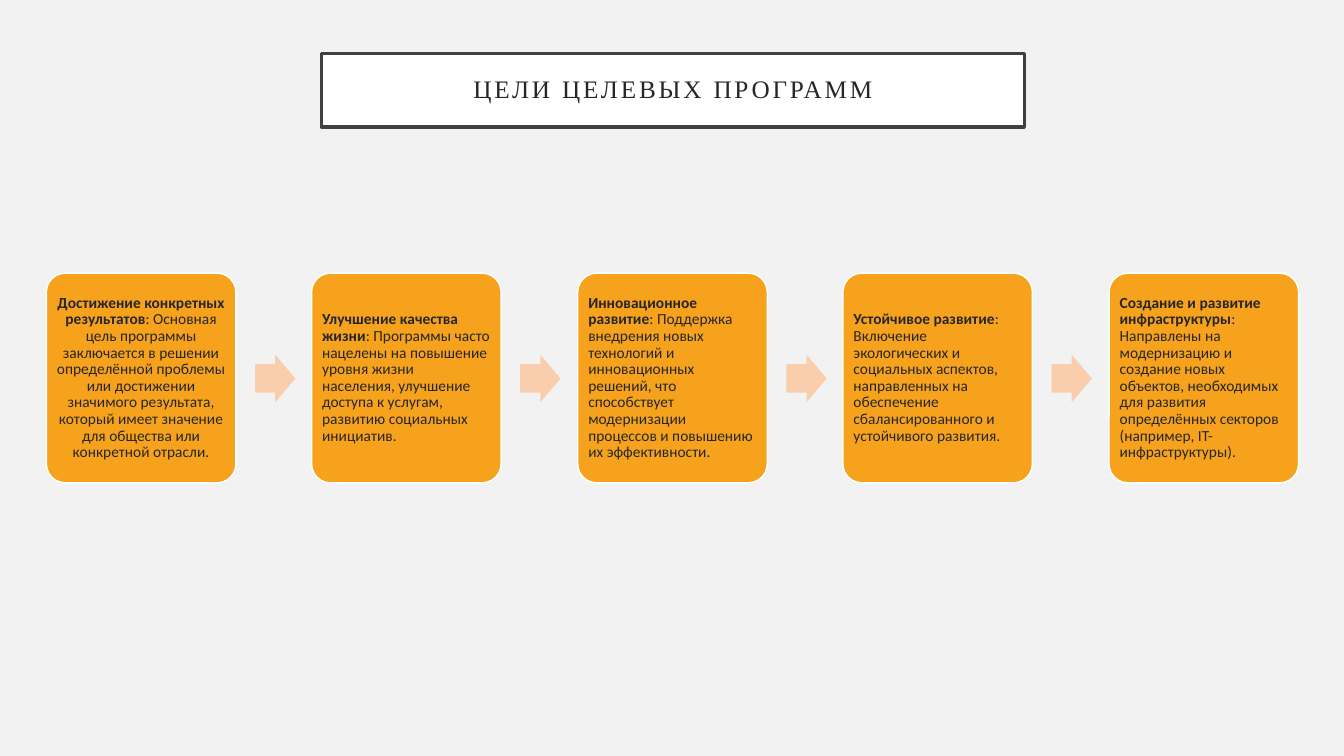
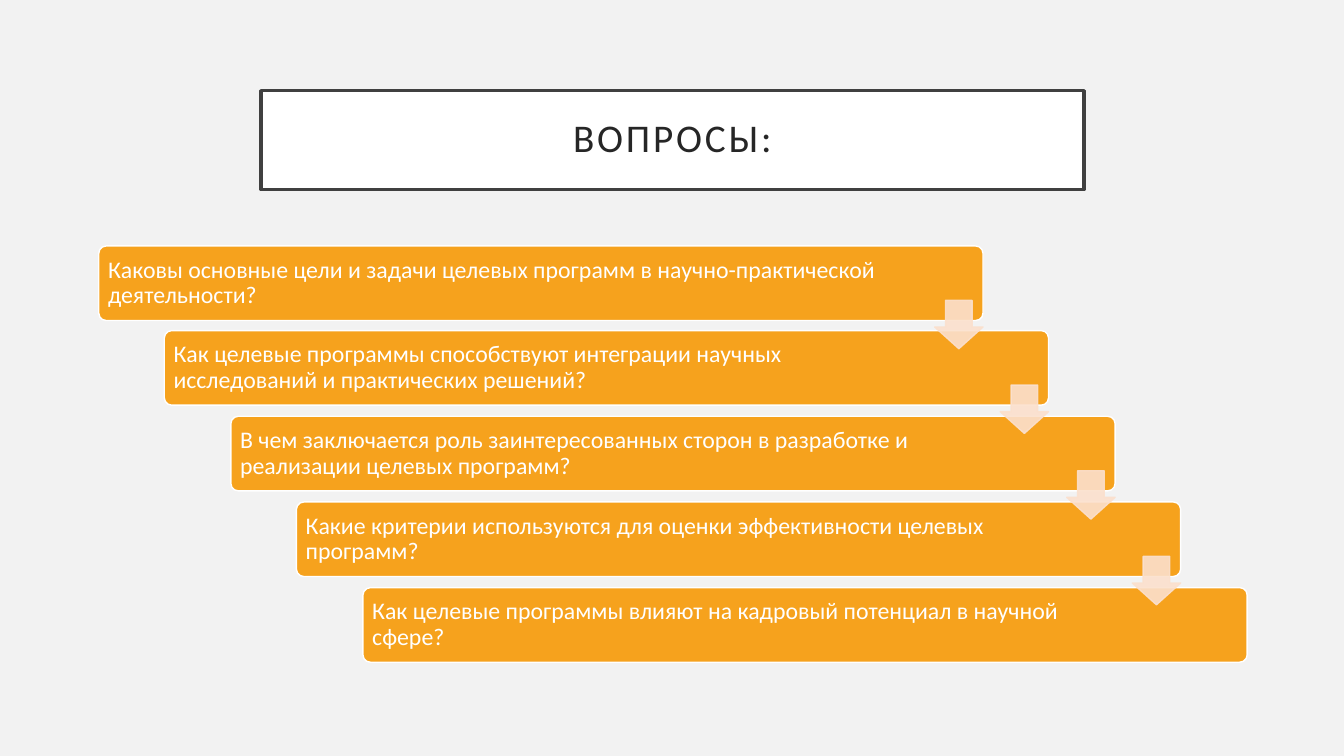
"""Build two slides on the goals of target programmes and the questions about them."""
from dataclasses import dataclass

from lxml import etree
from pptx import Presentation
from pptx import util as u
from pptx.dml.color import RGBColor
from pptx.enum import shapes, text
from pptx.oxml import ns

PX = 9144
PAPER = RGBColor(0xF2, 0xF2, 0xF2)
WHITE = RGBColor(0xFF, 0xFF, 0xFF)
FRAME = RGBColor(0x40, 0x40, 0x40)
INK = RGBColor(0x26, 0x26, 0x26)
ORANGE = RGBColor(0xF6, 0xA2, 0x1D)
PEACH = RGBColor(0xFA, 0xCE, 0xAC)
PALE = RGBColor(0xFB, 0xE0, 0xCD)
KIND = shapes.MSO_SHAPE
LEFT, CENTER = text.PP_ALIGN.LEFT, text.PP_ALIGN.CENTER


@dataclass(frozen=True)
class Box:
    x: int
    y: int
    w: int
    h: int


@dataclass(frozen=True)
class Type:
    font: str
    size: int
    color: RGBColor
    align: text.PP_ALIGN = LEFT


@dataclass(frozen=True)
class Goal:
    head: str
    body: str
    align: text.PP_ALIGN = LEFT


@dataclass(frozen=True)
class Query:
    body: str
    right: int = 121


GOALS = [
    Goal("Достижение конкретных результатов",
         ": Основная цель программы заключается в решении определённой проблемы или достижении "
         "значимого результата, который имеет значение для общества или конкретной отрасли.", CENTER),
    Goal("Улучшение качества жизни",
         ": Программы часто нацелены на повышение уровня жизни населения, улучшение доступа "
         "к услугам, развитию социальных инициатив."),
    Goal("Инновационное развитие",
         ": Поддержка внедрения новых технологий и инновационных решений, что способствует "
         "модернизации процессов и повышению их эффективности."),
    Goal("Устойчивое развитие",
         ": Включение экологических и социальных аспектов, направленных на обеспечение "
         "сбалансированного и устойчивого развития."),
    Goal("Создание и развитие инфраструктуры",
         ": Направлены на модернизацию и создание новых объектов, необходимых для развития "
         "определённых секторов (например, IT-инфраструктуры)."),
]
QUERIES = [
    Query("Каковы основные цели и задачи целевых программ в научно-практической деятельности?", 91),
    Query("Как целевые программы способствуют интеграции научных исследований и практических решений?"),
    Query("В чем заключается роль заинтересованных сторон в разработке и реализации целевых программ?"),
    Query("Какие критерии используются для оценки эффективности целевых программ?"),
    Query("Как целевые программы влияют на кадровый потенциал в научной сфере?"),
]


def draw(slide, kind, box: Box, fill: RGBColor, line: RGBColor | None = None,
         width: float = 1, adj: tuple[float, ...] = ()):
    shape = slide.shapes.add_shape(kind, *(v * PX for v in (box.x, box.y, box.w, box.h)))
    shape.shadow.inherit = False
    shape.fill.solid()
    shape.fill.fore_color.rgb = fill
    if line is None:
        shape.line.fill.background()
    else:
        shape.line.color.rgb = line
        shape.line.width = u.Pt(width)
    for i, v in enumerate(adj):
        shape.adjustments[i] = v
    return shape


def write(shape, runs: list[tuple[str, bool]], style: Type, pad: int, right: int | None = None):
    frame = shape.text_frame
    frame.word_wrap = True
    frame.vertical_anchor = text.MSO_ANCHOR.MIDDLE
    frame.margin_left = frame.margin_top = frame.margin_bottom = pad * PX
    frame.margin_right = (pad if right is None else right) * PX
    para = frame.paragraphs[0]
    para.alignment = style.align
    para.line_spacing = 0.9
    para.font.name = style.font
    para.font.size = u.Pt(style.size)
    para.font.color.rgb = style.color
    for words, bold in runs:
        run = para.add_run()
        run.text = words
        if bold:
            run.font.bold = True
    return para


def fade(shape, share: int) -> None:
    for color in shape._element.spPr.iter(ns.qn("a:srgbClr")):
        etree.SubElement(color, ns.qn("a:alpha")).set("val", str(share * 1000))


def start(deck, title: str, box: Box, font: str, size: int):
    slide = deck.slides.add_slide(deck.slide_layouts[6])
    slide.background.fill.solid()
    slide.background.fill.fore_color.rgb = PAPER
    frame = draw(slide, KIND.RECTANGLE, box, WHITE, FRAME, 2.5)
    para = write(frame, [(title, False)], Type(font, size, INK, CENTER), 20)
    para.runs[0].font._element.set("spc", "200")
    return slide


def panel(slide, box: Box):
    return draw(slide, KIND.ROUNDED_RECTANGLE, box, ORANGE, WHITE, adj=(0.1,))


def goals(deck) -> None:
    slide = start(deck, "ЦЕЛИ ЦЕЛЕВЫХ ПРОГРАММ", Box(319, 53, 697, 73), "Times New Roman", 18)
    for i, goal in enumerate(GOALS):
        card = Box(46 + i * 527 // 2, 271, 188, 208)
        write(panel(slide, card), [(goal.head, True), (goal.body, False)],
              Type("Calibri", 11, INK, goal.align), 5)
        if i < len(GOALS) - 1:
            draw(slide, KIND.RIGHT_ARROW, Box(card.x + card.w + 19, 352, 40, 47),
                 PEACH, adj=(0.6, 0.5))


def queries(deck) -> None:
    slide = start(deck, "ВОПРОСЫ:", Box(259, 90, 816, 98), "Calibri", 28)
    steps = [Box(98 + i * 131 // 2, 244 + i * 339 // 4, 877, 74) for i in range(len(QUERIES))]
    for step, query in zip(steps, QUERIES):
        write(panel(slide, step), [(query.body, False)], Type("Calibri", 17, WHITE), 7, query.right)
    for step in steps[:-1]:
        arrow = draw(slide, KIND.DOWN_ARROW, Box(step.x + step.w - 48, step.y + 54, 48, 48),
                     PALE, PALE, adj=(0.55, 0.45))
        fade(arrow, 90)


def main() -> None:
    deck = Presentation()
    deck.slide_width, deck.slide_height = 1333 * PX, 750 * PX
    goals(deck)
    queries(deck)
    deck.save("out.pptx")


if __name__ == "__main__":
    main()
